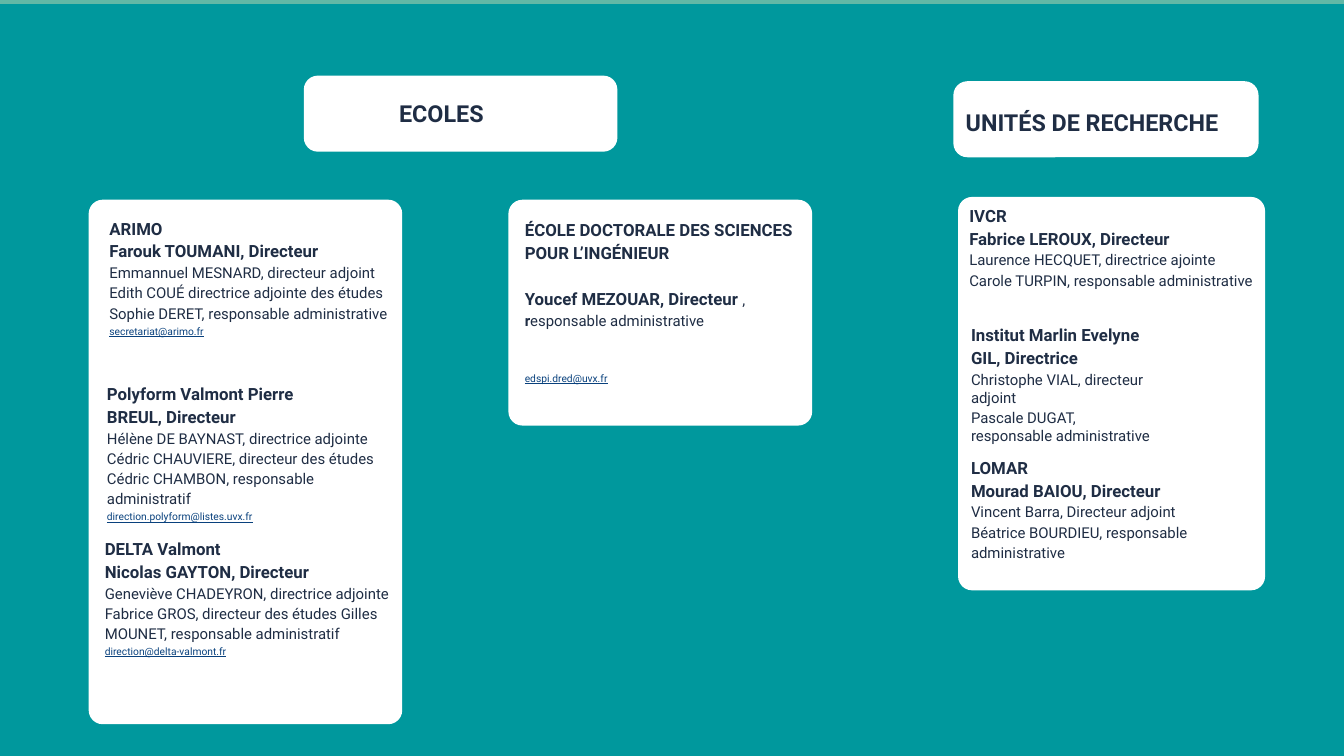
from pptx import Presentation
from pptx.dml.color import RGBColor
from pptx.enum.shapes import MSO_SHAPE
from pptx.util import Pt

RECTANGLE = MSO_SHAPE.RECTANGLE
ROUNDED = MSO_SHAPE.ROUNDED_RECTANGLE

WIDTH, HEIGHT = 1440, 810
STRIP_HEIGHT = 4.3
CORNER = 15
STRIP, TEAL, WHITE, NAVY, LINK = "62B8A6", "00989D", "FFFFFF", "1F2D44", "09417D"

STYLES = {
    "title": dict(size=25, bold=True),
    "head": dict(size=18, bold=True, spacing=1.13),
    "body": dict(size=16, spacing=1.13),
    "strong": dict(size=16, bold=True, spacing=1.13),
    "tight": dict(size=16, before=2.7),
    "mail": dict(size=11, color=LINK, underline=True, before=3),
}

CARDS = [
    (325.5, 81, 336, 81.5),
    (95, 214, 336, 562),
    (544.7, 214, 325.5, 242),
    (1021.5, 87, 327, 81.5),
    (1026.5, 211, 329, 421.5),
]

BLOCKS = [
    ((427.7, 106.6, 261.4, 30), [("title", "ECOLES")]),
    ((117.2, 231.2, 302, 153), [
        ("head", "ARIMO"),
        ("head", "Farouk TOUMANI, Directeur"),
        ("body", "Emmannuel MESNARD, directeur adjoint"),
        ("body", "Edith COUÉ directrice adjointe des études"),
        ("body", "Sophie DERET, responsable administrative"),
        ("mail", "secretariat@arimo.fr"),
    ]),
    ((114.6, 408.5, 302, 155), [
        ("head", "Polyform Valmont Pierre"),
        ("head", "BREUL, Directeur"),
        ("body", "Hélène DE BAYNAST, directrice adjointe"),
        ("body", "Cédric CHAUVIERE, directeur des études"),
        ("body", "Cédric CHAMBON, responsable administratif"),
        ("mail", "direction.polyform@listes.uvx.fr"),
    ]),
    ((112.3, 574.6, 307.5, 153), [
        ("head", "DELTA Valmont"),
        ("head", "Nicolas GAYTON, Directeur"),
        ("body", "Geneviève CHADEYRON, directrice adjointe"),
        ("body", "Fabrice GROS, directeur des études Gilles MOUNET, responsable administratif"),
        ("mail", "direction@delta-valmont.fr"),
    ]),
    ((562.3, 232.6, 295, 51), [("head", "ÉCOLE DOCTORALE DES SCIENCES POUR L’INGÉNIEUR")]),
    ((562.3, 306.5, 258, 46), [
        ("head", "Youcef MEZOUAR, Directeur ", ("body", ",")),
        ("strong", "r", ("body", "esponsable administrative")),
    ]),
    ((562.3, 398.9, 92, 15), [("mail", "edspi.dred@uvx.fr")]),
    ((1034.7, 116, 301, 30), [("title", "UNITÉS DE RECHERCHE")]),
    ((1038.6, 217.5, 307.5, 94), [
        ("head", "IVCR"),
        ("head", "Fabrice LEROUX, Directeur"),
        ("body", "Laurence HECQUET, directrice ajointe"),
        ("body", "Carole TURPIN, responsable administrative"),
    ]),
    ((1040.4, 345.3, 194, 130), [
        ("head", "Institut Marlin Evelyne GIL, Directrice"),
        ("tight", "Christophe VIAL, directeur adjoint"),
        ("tight", "Pascale DUGAT, responsable administrative"),
    ]),
    ((1040.4, 487.5, 235, 117), [
        ("head", "LOMAR"),
        ("head", "Mourad BAIOU, Directeur"),
        ("body", "Vincent Barra, Directeur adjoint"),
        ("body", "Béatrice BOURDIEU, responsable administrative"),
    ]),
]


def rgb(color):
    return RGBColor.from_string(color)


def add_panel(slide, kind, box, color):
    panel = slide.shapes.add_shape(kind, *map(Pt, box))
    panel.fill.solid()
    panel.fill.fore_color.rgb = rgb(color)
    panel.line.fill.background()
    panel.shadow.inherit = False
    return panel


def write(paragraph, text, size=16, bold=False, color=NAVY, underline=False, spacing=1.0, before=0):
    run = paragraph.add_run()
    run.text = text
    font = run.font
    font.name = "Roboto"
    font.size = Pt(size)
    font.bold = bold
    font.underline = underline
    font.color.rgb = rgb(color)
    paragraph.line_spacing = spacing
    paragraph.space_before = Pt(before)


def add_block(slide, box, lines):
    frame = slide.shapes.add_textbox(*map(Pt, box)).text_frame
    frame.word_wrap = True
    frame.margin_left = frame.margin_right = frame.margin_top = frame.margin_bottom = 0
    for index, (style, text, *extras) in enumerate(lines):
        paragraph = frame.add_paragraph() if index else frame.paragraphs[0]
        for run_style, run_text in [(style, text), *extras]:
            write(paragraph, run_text, **STYLES[run_style])


def main():
    deck = Presentation()
    deck.slide_width, deck.slide_height = Pt(WIDTH), Pt(HEIGHT)
    slide = deck.slides.add_slide(deck.slide_layouts[6])
    slide.background.fill.solid()
    slide.background.fill.fore_color.rgb = rgb(STRIP)
    add_panel(slide, RECTANGLE, (0, STRIP_HEIGHT, WIDTH, HEIGHT - STRIP_HEIGHT), TEAL)
    for card in CARDS:
        panel = add_panel(slide, ROUNDED, card, WHITE)
        panel.adjustments[0] = CORNER / min(card[2:])
    for box, lines in BLOCKS:
        add_block(slide, box, lines)
    deck.save("out.pptx")


if __name__ == "__main__":
    main()
